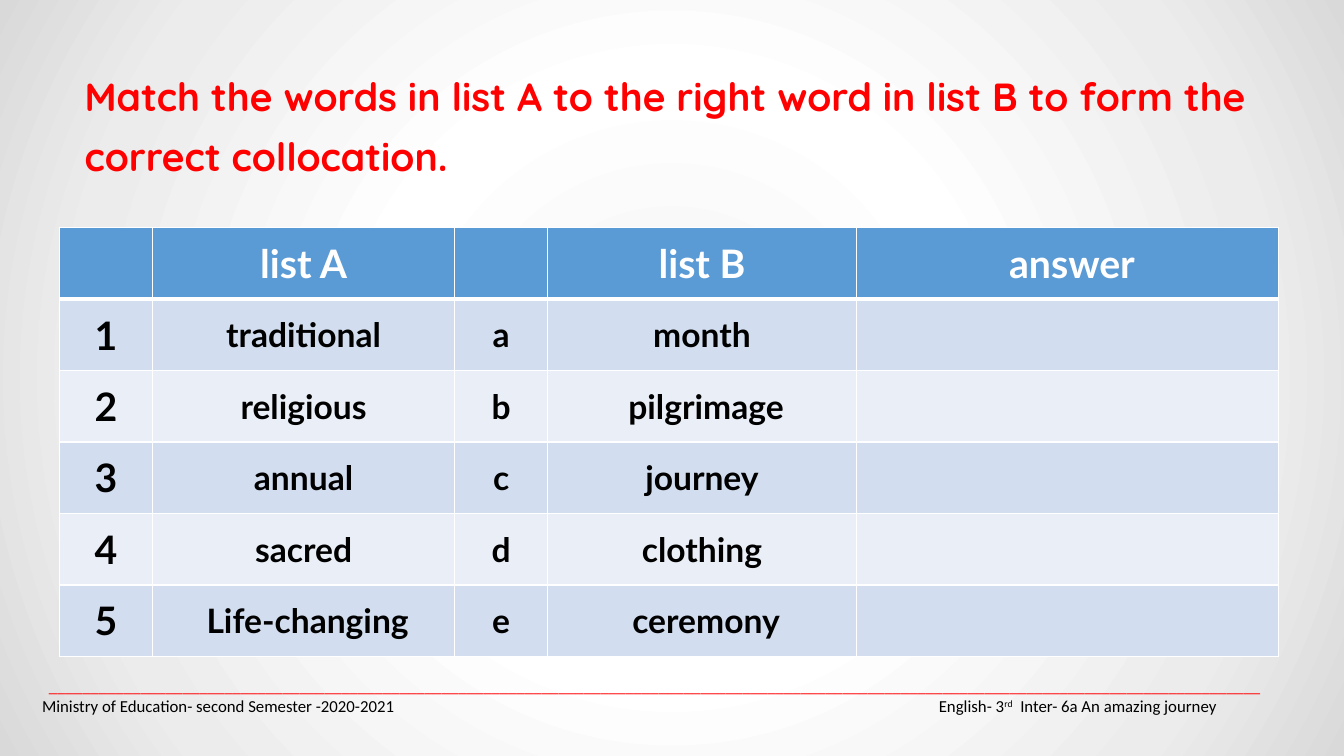
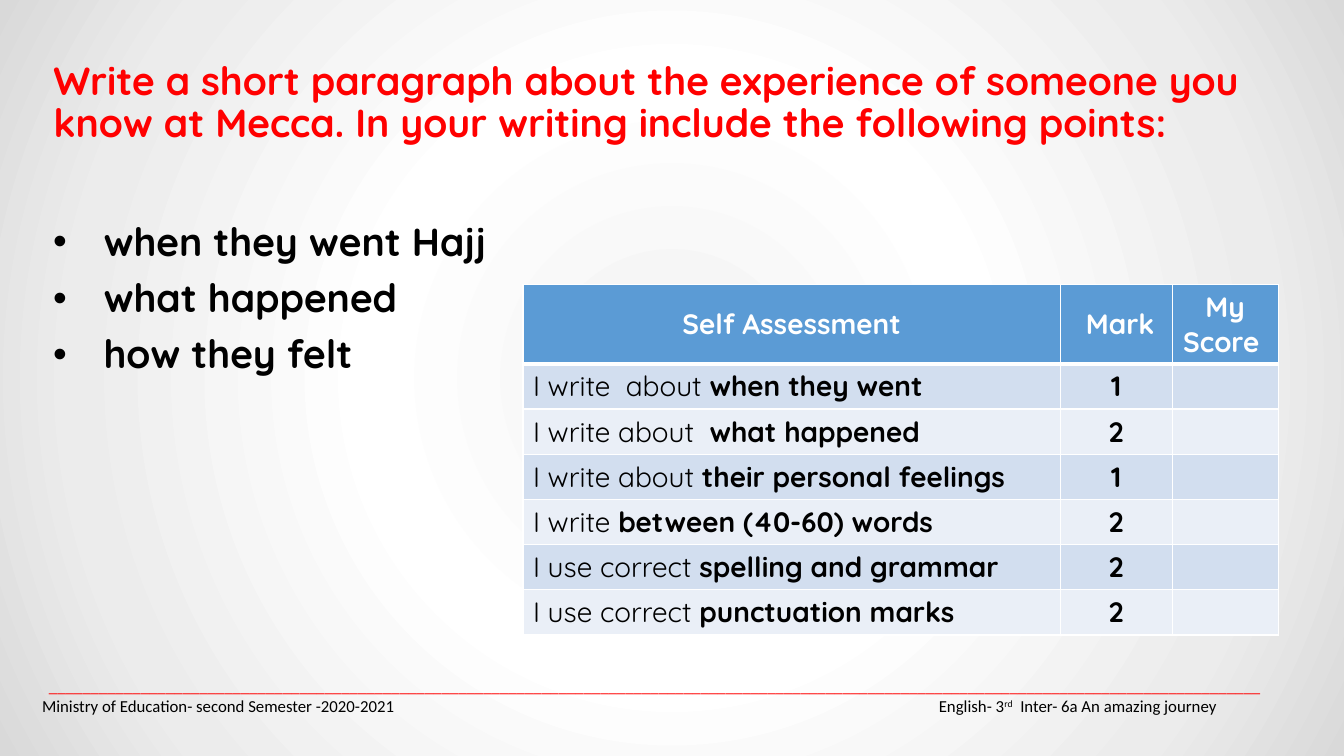
from dataclasses import dataclass

from lxml import etree
from pptx import Presentation
from pptx.dml.color import RGBColor
from pptx.enum.text import MSO_ANCHOR, MSO_AUTO_SIZE, PP_ALIGN
from pptx.oxml import parse_xml
from pptx.oxml.ns import nsdecls, qn
from pptx.util import Cm, Pt

LEFT, CENTER = PP_ALIGN.LEFT, PP_ALIGN.CENTER
TOP, MIDDLE = MSO_ANCHOR.TOP, MSO_ANCHOR.MIDDLE
NO_AUTOFIT = MSO_AUTO_SIZE.NONE
TITLE_ONLY = 5


@dataclass(frozen=True)
class Theme:
    """Colours, fonts and type sizes of the deck."""

    red: str = "FF0000"
    black: str = "000000"
    white: str = "FFFFFF"
    header: str = "5B9BD5"
    bands: tuple = ("D2DEEF", "EAEFF7")
    backdrop: tuple = ((0, "F2F2F2"), (39, "FFFFFF"), (78, "ECECEC"), (100, "D9D9D9"))
    display: str = "Quicksand"
    plain: str = "Lato"
    small: str = "Calibri"
    title_size: int = 28
    word_size: int = 24
    score_size: int = 20
    footer_size: int = 12
    tight: float = 0.9


@dataclass(frozen=True)
class Box:
    """A rectangle in centimetres."""

    left: float
    top: float
    width: float
    height: float

    def lengths(self):
        """Return the four sides as slide lengths."""
        return Cm(self.left), Cm(self.top), Cm(self.width), Cm(self.height)


@dataclass(frozen=True)
class GridStyle:
    """Measures and type of a table."""

    widths: tuple
    header_height: float
    row_height: float
    font: str
    header_size: int
    column_sizes: tuple


THEME = Theme()
FOOTER_BOX = Box(0.81, 17.02, 31.42, 1.02)
COLLOCATION_STYLE = GridStyle(
    (2.34, 7.62, 2.34, 7.78, 10.63), 1.8, 1.8, THEME.plain, THEME.title_size,
    (THEME.title_size,) + (THEME.word_size,) * 4)
ASSESSMENT_STYLE = GridStyle(
    (13.54, 2.82, 2.67), 2.01, 1.14, THEME.display, THEME.score_size,
    (THEME.score_size,) * 3)
COLLOCATIONS = (
    ("", "list A", "", "list B", " answer"),
    ("1", "traditional", "a", "month", ""),
    ("2", "religious", "b", " pilgrimage", ""),
    ("3", "annual", "c", "journey", ""),
    ("4", "sacred", "d", "clothing", ""),
    ("5", " Life-changing", "e", " ceremony", ""),
)
ASSESSMENT = (
    ("Self Assessment", " Mark", "My Score "),
    (("I write  about ", "when they went"), "1", ""),
    (("I write about  ", "what happened"), "2", ""),
    (("I write about ", "their personal feelings"), "1", ""),
    (("I write ", "between (40-60) words"), "2", ""),
    (("I use correct ", "spelling and grammar"), "2", ""),
    (("I use correct ", "punctuation marks"), "2", ""),
)
POINTS = ("when they went Hajj", "what happened", "how they felt")


def style_span(span, font, size, color, bold=True):
    """Format one run of text."""
    span.font.name = font
    span.font.size = Pt(size)
    span.font.bold = bold
    span.font.color.rgb = RGBColor.from_string(color)


def paint_backdrop(deck):
    """Give the master the round grey gradient."""
    fill = deck.slide_master.background.fill
    fill.solid()
    stops = "".join(f'<a:gs pos="{place * 1000}"><a:srgbClr val="{color}"/></a:gs>'
                    for place, color in THEME.backdrop)
    gradient = parse_xml(
        f'<a:gradFill {nsdecls("a")} rotWithShape="1"><a:gsLst>{stops}</a:gsLst>'
        '<a:path path="circle"><a:fillToRect l="50000" t="50000" r="50000" b="50000"/>'
        '</a:path></a:gradFill>')
    solid = deck.slide_master.element.find(".//" + qn("p:bgPr")).find(qn("a:solidFill"))
    solid.getparent().replace(solid, gradient)


def set_title(slide, box, text, spacing):
    """Place and format the slide title."""
    title = slide.shapes.title
    title.left, title.top, title.width, title.height = box.lengths()
    frame = title.text_frame
    frame.text = text
    frame.word_wrap = True
    frame.auto_size = NO_AUTOFIT
    frame.vertical_anchor = TOP
    para = frame.paragraphs[0]
    para.alignment = LEFT
    para.line_spacing = spacing
    style_span(para.runs[0], THEME.display, THEME.title_size, THEME.red)


def add_frame(slide, box, anchor=TOP):
    """Add a wrapping text box and return its frame."""
    frame = slide.shapes.add_textbox(*box.lengths()).text_frame
    frame.word_wrap = True
    frame.vertical_anchor = anchor
    return frame


def add_bullets(slide, box, points):
    """Add a bulleted list."""
    frame = add_frame(slide, box)
    frame.text = "\n".join(points)
    for para in frame.paragraphs:
        para.line_spacing = THEME.tight
        para.space_after = Pt(10)
        style_span(para.runs[0], THEME.display, THEME.title_size, THEME.black)
        properties = para._p.get_or_add_pPr()
        properties.set("marL", str(Cm(1.27)))
        properties.set("indent", str(-Cm(1.27)))
        etree.SubElement(properties, qn("a:buFont")).set("typeface", "Arial")
        etree.SubElement(properties, qn("a:buChar")).set("char", "•")


def set_borders(cell, top, bottom):
    """Draw white borders round a cell."""
    sides = (("lnL", 1), ("lnR", 1), ("lnT", top), ("lnB", bottom))
    for index, (side, points) in enumerate(sides):
        border = parse_xml(
            f'<a:{side} {nsdecls("a")} w="{Pt(points)}"><a:solidFill>'
            f'<a:srgbClr val="{THEME.white}"/></a:solidFill></a:{side}>')
        cell._tc.get_or_add_tcPr().insert(index, border)


def fill_cell(cell, content, font, size, color):
    """Write a cell; a pair is a light opening and a bold ending."""
    cell.vertical_anchor = MIDDLE
    para = cell.text_frame.paragraphs[0]
    paired = isinstance(content, tuple)
    para.alignment = LEFT if paired else CENTER
    parts = zip(content, (False, True)) if paired else ((content, True),)
    for text, bold in parts:
        if text:
            span = para.add_run()
            span.text = text
            style_span(span, font, size, color, bold)


def add_grid(slide, left, top, style, rows):
    """Add a banded table with a strong header row."""
    body_count = len(rows) - 1
    box = Box(left, top, sum(style.widths),
              style.header_height + body_count * style.row_height)
    table = slide.shapes.add_table(len(rows), len(style.widths), *box.lengths()).table
    for column, width in zip(table.columns, style.widths):
        column.width = Cm(width)
    for index, contents in enumerate(rows):
        heading = index == 0
        table.rows[index].height = Cm(style.header_height if heading else style.row_height)
        fill = THEME.header if heading else THEME.bands[(index - 1) % 2]
        color = THEME.white if heading else THEME.black
        for position, content in enumerate(contents):
            cell = table.cell(index, position)
            size = style.header_size if heading else style.column_sizes[position]
            fill_cell(cell, content, style.font, size, color)
            cell.fill.solid()
            cell.fill.fore_color.rgb = RGBColor.from_string(fill)
            set_borders(cell, 3 if index == 1 else 1, 3 if heading else 1)


def add_footer(slide, box):
    """Add the red underscore line and the two footer notes."""
    frame = add_frame(slide, box, MIDDLE)
    frame.text = "_" * 145
    line = frame.paragraphs[0]
    line.alignment = CENTER
    style_span(line.runs[0], THEME.small, THEME.footer_size, THEME.red, False)
    notes = frame.add_paragraph()
    notes.alignment = LEFT
    stops = etree.SubElement(notes._p.get_or_add_pPr(), qn("a:tabLst"))
    stop = etree.SubElement(stops, qn("a:tab"))
    stop.set("pos", str(Cm(22.6)))
    stop.set("algn", "l")
    for text in ("Ministry of Education- second Semester -2020-2021\tEnglish- 3",
                 "rd", "  Inter- 6a An amazing journey"):
        span = notes.add_run()
        span.text = text
        style_span(span, THEME.small, THEME.footer_size, THEME.black, False)
    notes.runs[1]._r.get_or_add_rPr().set("baseline", "30000")


def add_page(deck):
    """Add a title-only slide with the footer."""
    page = deck.slides.add_slide(deck.slide_layouts[TITLE_ONLY])
    add_footer(page, FOOTER_BOX)
    return page


def build_matching(deck):
    """Build the collocation exercise."""
    page = add_page(deck)
    set_title(page, Box(1.88, 1.35, 31.42, 3.15),
              "Match the words in list A to the right word in list B "
              "to form the correct collocation.", Pt(43.2))
    add_grid(page, 1.5, 5.74, COLLOCATION_STYLE, COLLOCATIONS)


def build_writing(deck):
    """Build the writing task with its self assessment."""
    page = add_page(deck)
    set_title(page, Box(1.09, 1.42, 31.14, 2.6),
              "Write a short paragraph about the experience of someone you know at Mecca. "
              "In your writing include the following points:", THEME.tight)
    add_bullets(page, Box(1.09, 5.48, 12, 4.5), POINTS)
    add_grid(page, 13.18, 7.16, ASSESSMENT_STYLE, ASSESSMENT)


def main():
    """Build and save the deck."""
    deck = Presentation()
    deck.slide_width, deck.slide_height = Cm(33.87), Cm(19.05)
    paint_backdrop(deck)
    build_matching(deck)
    build_writing(deck)
    deck.save("out.pptx")


if __name__ == "__main__":
    main()
